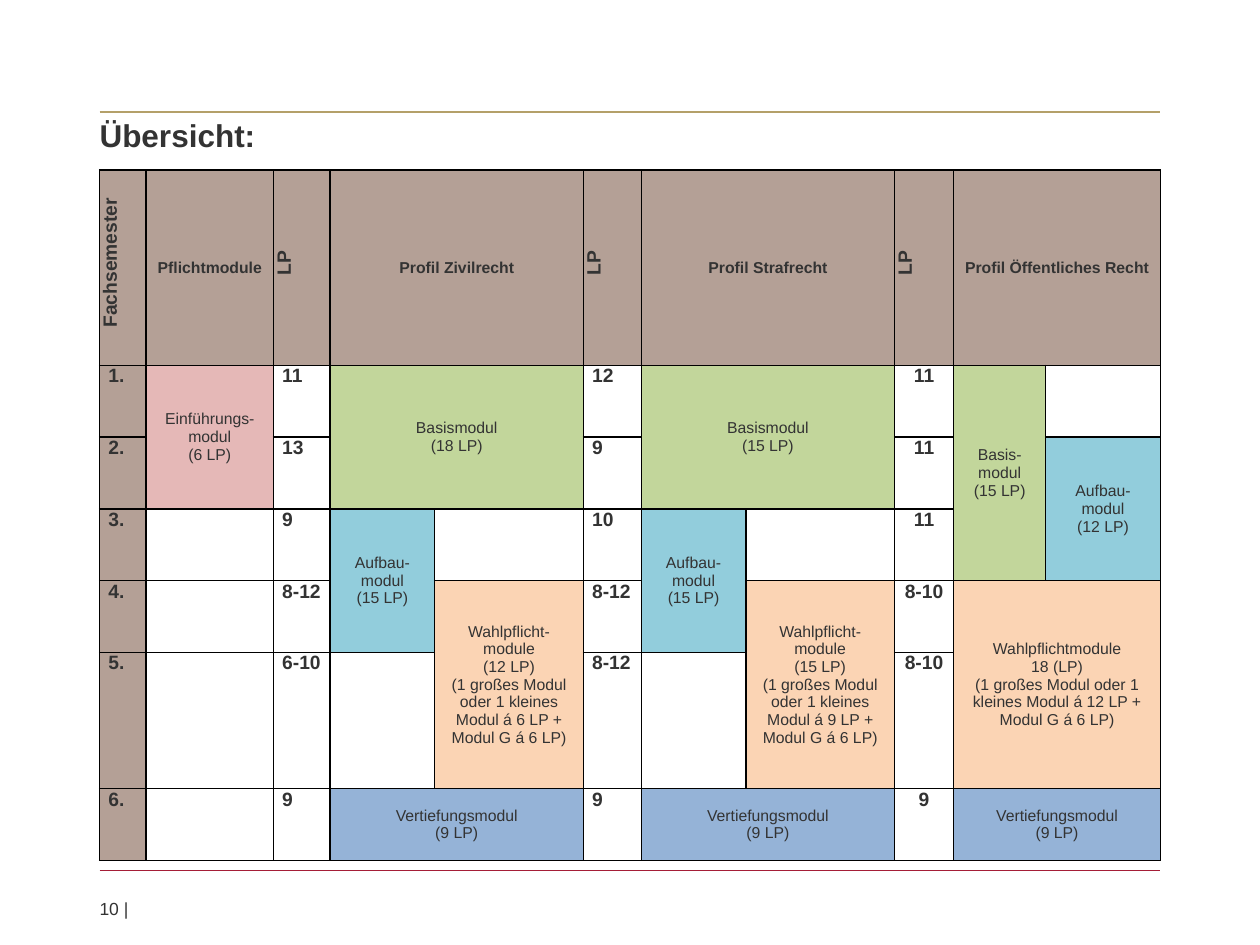
import pptx
import pptx.util
import pptx.dml.color
import pptx.enum.shapes
import pptx.enum.text
from lxml import etree

RGBColor = pptx.dml.color.RGBColor
Inches, Pt = pptx.util.Inches, pptx.util.Pt
PP_ALIGN = pptx.enum.text.PP_ALIGN
MSO_ANCHOR = pptx.enum.text.MSO_ANCHOR
A = "{http://schemas.openxmlformats.org/drawingml/2006/main}"

TEXT = RGBColor(0x33, 0x33, 0x33)
BLACK = RGBColor(0x00, 0x00, 0x00)
WHITE = RGBColor(0xFF, 0xFF, 0xFF)
GOLD = RGBColor(0xB4, 0xA0, 0x69)
CRIMSON = RGBColor(0xA5, 0x1E, 0x37)
TAUPE = RGBColor(0xB4, 0xA0, 0x96)
ROSE = RGBColor(0xE5, 0xB8, 0xB7)
GREEN = RGBColor(0xC2, 0xD6, 0x9B)
TEAL = RGBColor(0x92, 0xCD, 0xDC)
PEACH = RGBColor(0xFB, 0xD4, 0xB4)
BLUE = RGBColor(0x95, 0xB3, 0xD7)

LEFT, WIDTH = 0.79, 8.42
COLS = [0.37, 1.01, 0.45, 0.83, 1.18, 0.46, 0.83, 1.18, 0.47, 0.73, 0.91]
ROWS = [1.55, 0.57, 0.57, 0.57, 0.57, 1.08, 0.57]

# Header: column, columns spanned, text
HEADERS = [
    (1, 1, "Pflichtmodule"),
    (3, 2, "Profil Zivilrecht"),
    (6, 2, "Profil Strafrecht"),
    (9, 2, "Profil Öffentliches Recht"),
]
VERTICAL_HEADERS = {0: "Fachsemester", 2: "LP", 5: "LP", 8: "LP"}

# Credit points per semester, by column
CREDITS = {
    2: ["11", "13", "9", "8-12", "6-10", "9"],
    5: ["12", "9", "10", "8-12", "8-12", "9"],
    8: ["11", "11", "11", "8-10", "8-10", "9"],
}

# Modules: row, column, rows spanned, columns spanned, fill, paragraphs
MODULES = [
    (1, 1, 2, 1, ROSE, ["Einführungs-\nmodul", "(6 LP)"]),
    (1, 3, 2, 2, GREEN, ["Basismodul\n(18 LP)"]),
    (1, 6, 2, 2, GREEN, ["Basismodul\n(15 LP)"]),
    (1, 9, 3, 1, GREEN, ["Basis-modul\n(15 LP)"]),
    (2, 10, 2, 1, TEAL, ["Aufbau-modul\n(12 LP)"]),
    (3, 3, 2, 1, TEAL, ["Aufbau-modul\n(15 LP)"]),
    (3, 6, 2, 1, TEAL, ["Aufbau-modul\n(15 LP)"]),
    (4, 4, 2, 1, PEACH, ["Wahlpflicht-module\n(12 LP)",
                         "(1 großes Modul oder 1 kleines Modul á 6 LP + Modul G á 6 LP)"]),
    (4, 7, 2, 1, PEACH, ["Wahlpflicht-module\n(15 LP)",
                         "(1 großes Modul oder 1 kleines Modul á 9 LP + Modul G á 6 LP)"]),
    (4, 9, 2, 2, PEACH, ["Wahlpflichtmodule\n18 (LP)",
                         "(1 großes Modul oder 1 kleines Modul á 12 LP + Modul G á 6 LP)"]),
] + [(6, col, 1, 2, BLUE, ["Vertiefungsmodul\n(9 LP)"]) for col in (3, 6, 9)]


def write(tf, paragraphs, size, bold=False, align=PP_ALIGN.LEFT):
    for i, text in enumerate(paragraphs):
        p = tf.paragraphs[0] if i == 0 else tf.add_paragraph()
        p.alignment = align
        for j, line in enumerate(text.split("\n")):
            if j:
                p.add_line_break()
            r = p.add_run()
            r.text = line
            r.font.name = "Arial"
            r.font.size = Pt(size)
            r.font.bold = bold
            r.font.color.rgb = TEXT


def clear_margins(tf):
    tf.margin_left = tf.margin_right = tf.margin_top = tf.margin_bottom = 0
    tf.word_wrap = True


def add_rule(s, left, top, width, color):
    line = s.shapes.add_connector(
        pptx.enum.shapes.MSO_CONNECTOR.STRAIGHT,
        Inches(left), Inches(top), Inches(left + width), Inches(top))
    line.line.color.rgb = color
    line.line.width = Pt(0.75)
    etree.SubElement(line._element.spPr, A + "effectLst")


def add_title(s, left, top, width, height):
    sp = s.shapes.title
    sp.left, sp.top, sp.width, sp.height = map(Inches, (left, top, width, height))
    tf = sp.text_frame
    clear_margins(tf)
    tf.auto_size = pptx.enum.text.MSO_AUTO_SIZE.NONE
    tf.vertical_anchor = MSO_ANCHOR.TOP
    write(tf, ["Übersicht:"], 18, bold=True)
    tf.paragraphs[0].line_spacing = 1.1


def add_page_number(s, left, top, width, height):
    sp = s.shapes.add_textbox(*map(Inches, (left, top, width, height)))
    clear_margins(sp.text_frame)
    write(sp.text_frame, ["10 |"], 10)


def format_cell(cell):
    cell.margin_left = cell.margin_right = Inches(0.07)
    cell.margin_top = cell.margin_bottom = 0
    tcPr = cell._tc.get_or_add_tcPr()
    for side in ("lnL", "lnR", "lnT", "lnB"):
        ln = etree.SubElement(tcPr, A + side, w=str(Pt(1)))
        fill = etree.SubElement(ln, A + "solidFill")
        etree.SubElement(fill, A + "srgbClr", val=str(BLACK))
    set_fill(cell, WHITE)


def set_fill(cell, color):
    cell.fill.solid()
    cell.fill.fore_color.rgb = color


def add_block(table, row, col, rows, cols, color, paragraphs, bold=False):
    cell = table.cell(row, col)
    if rows * cols > 1:
        cell.merge(table.cell(row + rows - 1, col + cols - 1))
    set_fill(cell, color)
    cell.vertical_anchor = MSO_ANCHOR.MIDDLE
    write(cell.text_frame, paragraphs, 9, bold, PP_ALIGN.CENTER)


def add_plan(s, left, top):
    frame = s.shapes.add_table(len(ROWS), len(COLS), Inches(left), Inches(top),
                               Inches(sum(COLS)), Inches(sum(ROWS)))
    table = frame.table
    table.first_row = table.horz_banding = False
    for column, width in zip(table.columns, COLS):
        column.width = Inches(width)
    for row, height in zip(table.rows, ROWS):
        row.height = Inches(height)
    for cell in table.iter_cells():
        format_cell(cell)

    # Header row
    for col, span, text in HEADERS:
        add_block(table, 0, col, 1, span, TAUPE, [text], bold=True)
    for col, text in VERTICAL_HEADERS.items():
        cell = table.cell(0, col)
        set_fill(cell, TAUPE)
        cell.vertical_anchor = MSO_ANCHOR.MIDDLE
        cell._tc.get_or_add_tcPr().set("vert", "vert270")
        write(cell.text_frame, [text], 11, True, PP_ALIGN.CENTER)
        pPr = cell.text_frame.paragraphs[0]._p.get_or_add_pPr()
        pPr.set("marL", str(Inches(0.08)))

    # Semesters and credit points
    for row in range(1, len(ROWS)):
        cell = table.cell(row, 0)
        set_fill(cell, TAUPE)
        write(cell.text_frame, [f"{row}."], 11, bold=True)
        for col, credits in CREDITS.items():
            align = PP_ALIGN.CENTER if col == 8 else PP_ALIGN.LEFT
            write(table.cell(row, col).text_frame, [credits[row - 1]], 11, True, align)

    # Modules
    for module in MODULES:
        add_block(table, *module)


def main():
    prs = pptx.Presentation()
    prs.slide_width, prs.slide_height = Inches(10), Inches(7.5)
    s = prs.slides.add_slide(prs.slide_layouts[5])
    add_rule(s, LEFT, 0.89, WIDTH, GOLD)
    add_rule(s, LEFT, 6.91, WIDTH, CRIMSON)
    add_title(s, LEFT, 0.89, WIDTH, 0.36)
    add_page_number(s, LEFT, 7.13, WIDTH, 0.17)
    add_plan(s, LEFT, 1.35)
    prs.save("out.pptx")


if __name__ == "__main__":
    main()
